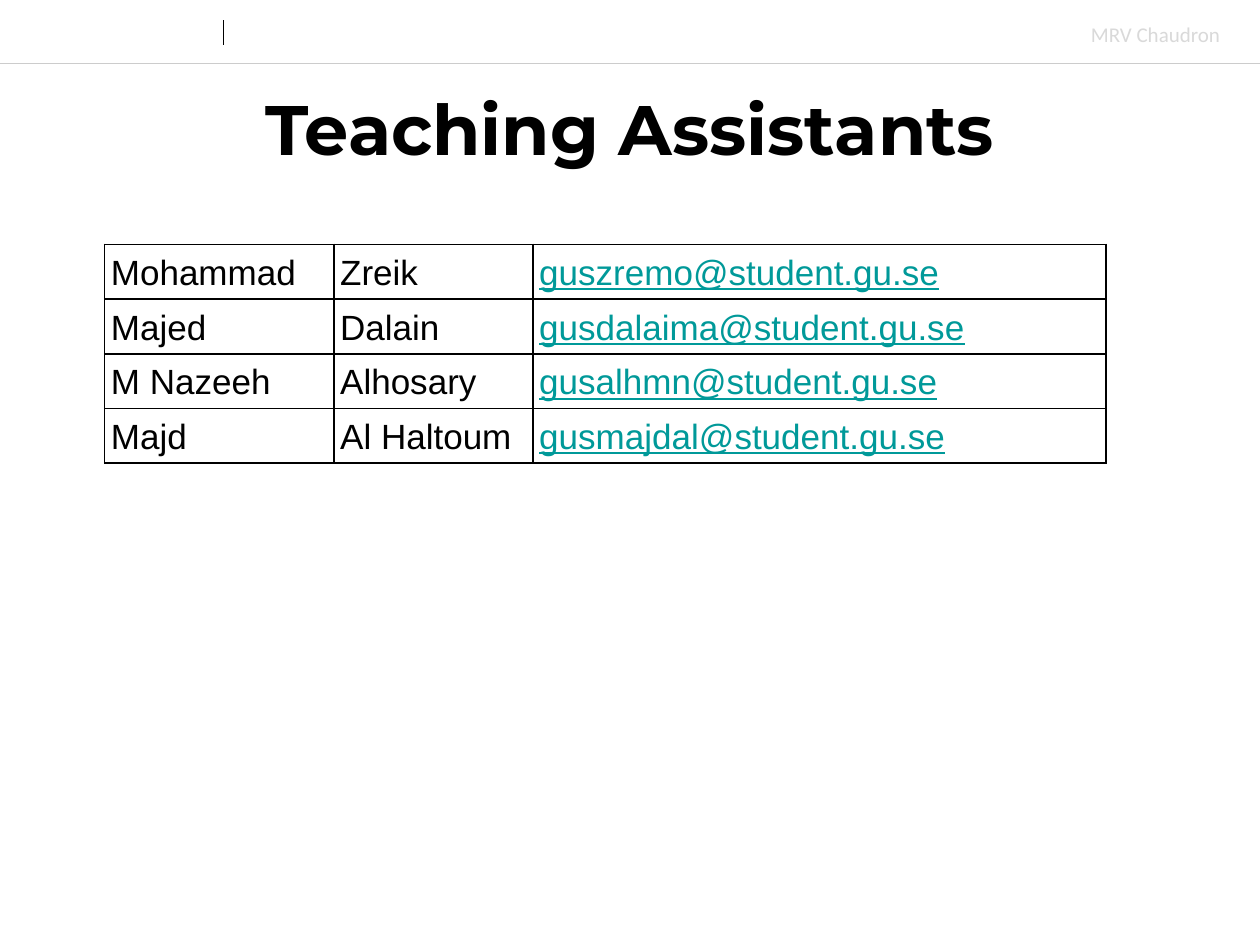
from lxml import etree
from pptx import Presentation
from pptx.dml.color import RGBColor
from pptx.enum.shapes import MSO_CONNECTOR
from pptx.enum.text import MSO_ANCHOR, PP_ALIGN
from pptx.oxml.ns import qn
from pptx.util import Inches, Pt

STRAIGHT = MSO_CONNECTOR.STRAIGHT
MIDDLE, BOTTOM = MSO_ANCHOR.MIDDLE, MSO_ANCHOR.BOTTOM
LEFT, CENTER = PP_ALIGN.LEFT, PP_ALIGN.CENTER

BLACK, WHITE, TEAL = "000000", "FFFFFF", "009999"
ASSISTANTS = [
    ("Mohammad", "Zreik", "guszremo@student.gu.se"),
    ("Majed", "Dalain", "gusdalaima@student.gu.se"),
    ("M Nazeeh", "Alhosary", "gusalhmn@student.gu.se"),
    ("Majd", "Al Haltoum", "gusmajdal@student.gu.se"),
]
COLUMN_WIDTHS = (1.82, 1.58, 4.55)


def color(value):
    return RGBColor.from_string(value)


def write(tf, text, size, font="Arial", fill=BLACK, bold=False,
          underline=False, align=LEFT):
    p = tf.paragraphs[0]
    p.alignment = align
    r = p.add_run()
    r.text = text
    r.font.size = Pt(size)
    r.font.name = font
    r.font.bold = bold
    r.font.underline = underline
    r.font.color.rgb = color(fill)


def add_text(slide, box, text, wrap=True, anchor=MSO_ANCHOR.TOP, **style):
    sp = slide.shapes.add_textbox(*map(Inches, box))
    tf = sp.text_frame
    tf.word_wrap = wrap
    tf.vertical_anchor = anchor
    write(tf, text, **style)


def add_line(slide, x1, y1, x2, y2, stroke, width):
    cxn = slide.shapes.add_connector(STRAIGHT, *map(Inches, (x1, y1, x2, y2)))
    cxn.line.color.rgb = color(stroke)
    cxn.line.width = Pt(width)
    etree.SubElement(cxn._element.spPr, qn("a:effectLst"))


def set_borders(cell, stroke, width):
    tcPr = cell._tc.get_or_add_tcPr()
    for i, side in enumerate(("lnL", "lnR", "lnT", "lnB")):
        ln = etree.Element(qn(f"a:{side}"), w=str(Pt(width)))
        fill = etree.SubElement(ln, qn("a:solidFill"))
        etree.SubElement(fill, qn("a:srgbClr"), val=stroke)
        tcPr.insert(i, ln)


def add_header(slide, left, top, width, height):
    bottom = top + height
    add_line(slide, left, bottom, left + width, bottom, "CCCCCC", 0.25)
    add_line(slide, left + 1.77, top + 0.16, left + 1.77, top + 0.36, BLACK, 0.5)
    add_text(slide, (left + width - 1.44, top + 0.12, 1.23, 0.3), "MRV Chaudron",
             wrap=False, size=12, font="Calibri", fill="D9D9D9")


def add_title(slide, *box):
    add_text(slide, box, "Teaching Assistants", anchor=MIDDLE, size=40,
             font="Montserrat", bold=True, align=CENTER)


def add_assistants(slide, *box):
    frame = slide.shapes.add_table(len(ASSISTANTS), len(COLUMN_WIDTHS),
                                   *map(Inches, box))
    table = frame.table
    table.first_row = table.horz_banding = False
    for column, width in zip(table.columns, COLUMN_WIDTHS):
        column.width = Inches(width)
    for i, person in enumerate(ASSISTANTS):
        for j, text in enumerate(person):
            cell = table.cell(i, j)
            cell.margin_left = cell.margin_right = Inches(0.05)
            cell.margin_top = cell.margin_bottom = Inches(0.05)
            cell.vertical_anchor = BOTTOM
            cell.fill.solid()
            cell.fill.fore_color.rgb = color(WHITE)
            set_borders(cell, BLACK, 1)
            is_email = j == 2
            write(cell.text_frame, text, size=20,
                  fill=TEAL if is_email else BLACK, underline=is_email)


def main():
    prs = Presentation()
    prs.slide_width, prs.slide_height = Inches(10), Inches(7.5)
    slide = prs.slides.add_slide(prs.slide_layouts[6])
    slide.background.fill.solid()
    slide.background.fill.fore_color.rgb = color(WHITE)
    add_header(slide, 0, 0, 10, 0.5)
    add_assistants(slide, 0.83, 1.94, sum(COLUMN_WIDTHS), 1.73)
    add_title(slide, 0, 0.6, 10, 0.83)
    prs.save("out.pptx")


if __name__ == "__main__":
    main()
